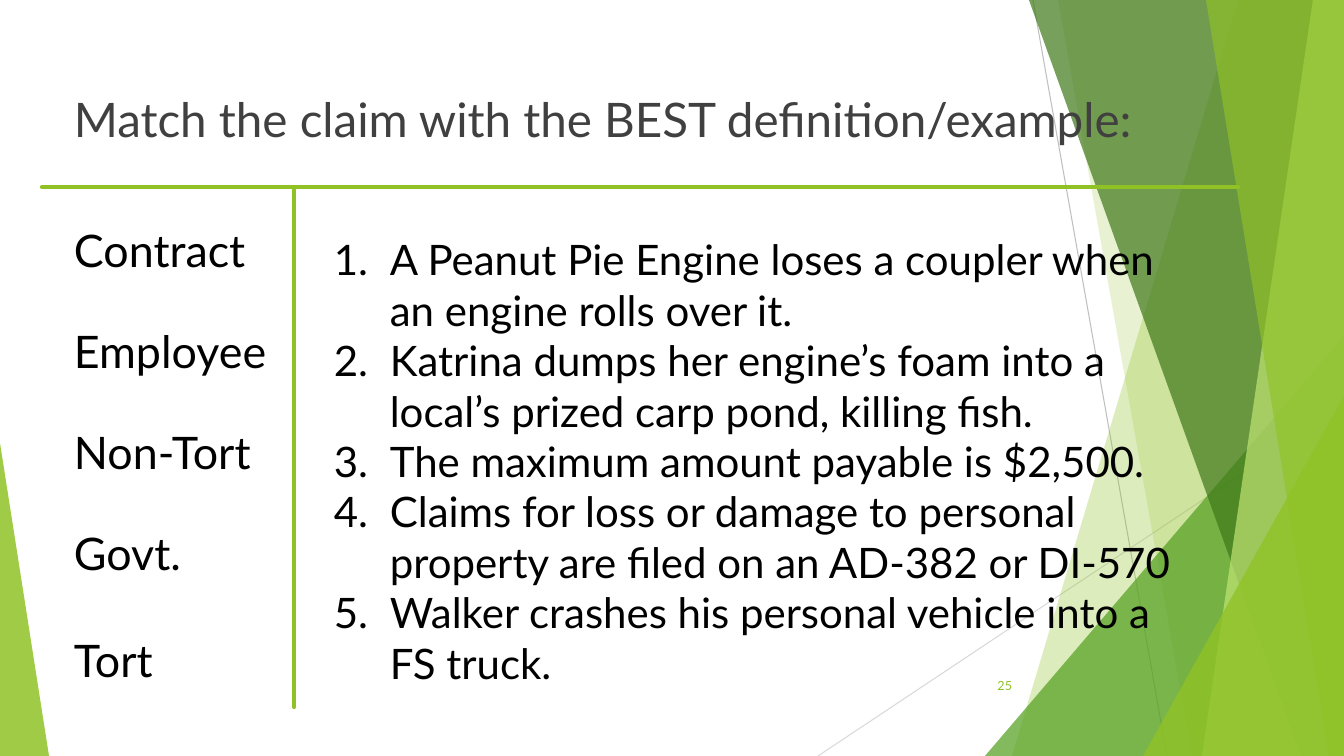
from lxml import etree
from pptx import Presentation
from pptx import util as u
from pptx.dml.color import RGBColor
from pptx.enum import shapes, text
from pptx.oxml.ns import qn

PX = 914400 / 100.8
GREEN = "90C226"


def px(length):
    return u.Emu(round(length * PX))


def rgb(value):
    return RGBColor.from_string(value)


class SlideBuilder:
    """Draws styled elements on one slide, with lengths in px."""

    def __init__(self, slide, font):
        self.slide = slide
        self.font = font

    def background(self, color):
        fill = self.slide.background.fill
        fill.solid()
        fill.fore_color.rgb = rgb(color)

    def paint(self, shape, color, opacity):
        shape.shadow.inherit = False
        shape.line.fill.background()
        shape.fill.solid()
        shape.fill.fore_color.rgb = rgb(color)
        tint = shape.fill._xPr.find(qn("a:solidFill"))[0]
        etree.SubElement(tint, qn("a:alpha"), val=str(opacity * 1000))

    def polygon(self, points, color, opacity):
        builder = self.slide.shapes.build_freeform(*points[0], scale=PX)
        builder.add_line_segments(points[1:], close=True)
        self.paint(builder.convert_to_shape(), color, opacity)

    def triangle(self, box, apex, color, opacity):
        kind = shapes.MSO_SHAPE.ISOSCELES_TRIANGLE
        shape = self.slide.shapes.add_shape(kind, *map(px, box))
        shape.adjustments[0] = apex
        self.paint(shape, color, opacity)

    def line(self, start, end, color, width, cap="flat"):
        kind = shapes.MSO_CONNECTOR.STRAIGHT
        connector = self.slide.shapes.add_connector(kind, *map(px, start + end))
        connector.line.color.rgb = rgb(color)
        connector.line.width = u.Pt(width)
        connector.line._get_or_add_ln().set("cap", cap)
        etree.SubElement(connector._element.spPr, qn("a:effectLst"))

    def text(self, box, lines, size, color="000000", gaps=(), numbered=False,
             align=text.PP_ALIGN.LEFT, anchor=text.MSO_ANCHOR.TOP):
        frame = self.slide.shapes.add_textbox(*map(px, box)).text_frame
        frame.word_wrap = True
        frame.vertical_anchor = anchor
        frame.text = "\n".join(lines)
        for paragraph in frame.paragraphs:
            paragraph.alignment = align
            if numbered:
                props = paragraph._p.get_or_add_pPr()
                props.set("marL", str(px(56)))
                props.set("indent", str(-px(56)))
                etree.SubElement(props, qn("a:buFont"), typeface=self.font)
                etree.SubElement(props, qn("a:buAutoNum"), type="arabicPeriod")
            for run in paragraph.runs:
                run.font.name = self.font
                run.font.size = u.Pt(size)
                run.font.color.rgb = rgb(color)
        for paragraph, gap in zip(frame.paragraphs[1:], gaps):
            paragraph.space_before = u.Pt(gap)


def main():
    deck = Presentation()
    deck.slide_width, deck.slide_height = px(1344), px(756)
    page = SlideBuilder(deck.slides.add_slide(deck.slide_layouts[6]), "Lato")
    page.background("FFFFFF")

    def band(top_left, bottom_left, color, opacity):
        corners = [(top_left, 0), (1344, 0), (1344, 756), (bottom_left, 756)]
        page.polygon(corners, color, opacity)

    page.line((1033, 0), (1167, 756), "BFBFBF", 0.75)
    page.line((1344, 406), (818, 756), "D9D9D9", 0.75)
    band(1238, 1012, GREEN, 30)
    band(1058, 1192, GREEN, 20)
    page.triangle((985, 336, 359, 420), 1, "54A021", 72)
    band(1029, 1301, "3F7819", 70)
    band(1313, 1202, "C0E474", 70)
    band(1206, 1329, GREEN, 65)
    page.triangle((1143, 396, 201, 360), 1, GREEN, 80)
    page.triangle((0, 443, 49, 313), 0, GREEN, 85)

    page.text((64, 85, 1122, 100),
              ["Match the claim with the BEST definition/example:"], 34, "404040")
    claims = ["Contract", "Employee", "Non-Tort", "Govt.", "Tort"]
    page.text((64, 218, 239, 479), claims, 32, gaps=(33.6, 33.6, 33.6, 38.4))
    definitions = [
        "A Peanut Pie Engine loses a coupler when an engine rolls over it.",
        "Katrina dumps her engine’s foam into a local’s prized carp pond, killing fish.",
        "The maximum amount payable is $2,500.",
        "Claims for loss or damage to personal property are filed on an AD-382 or DI-570",
        "Walker crashes his personal vehicle into a FS truck.",
    ]
    page.text((324, 229, 863, 468), definitions, 30, numbered=True)
    page.line((42, 187), (1238, 187), GREEN, 3, "rnd")
    page.line((294, 187), (294, 707), GREEN, 3, "rnd")
    page.text((947, 666, 75, 40), ["25"], 9, GREEN,
              align=text.PP_ALIGN.RIGHT, anchor=text.MSO_ANCHOR.MIDDLE)
    deck.save("out.pptx")


if __name__ == "__main__":
    main()
